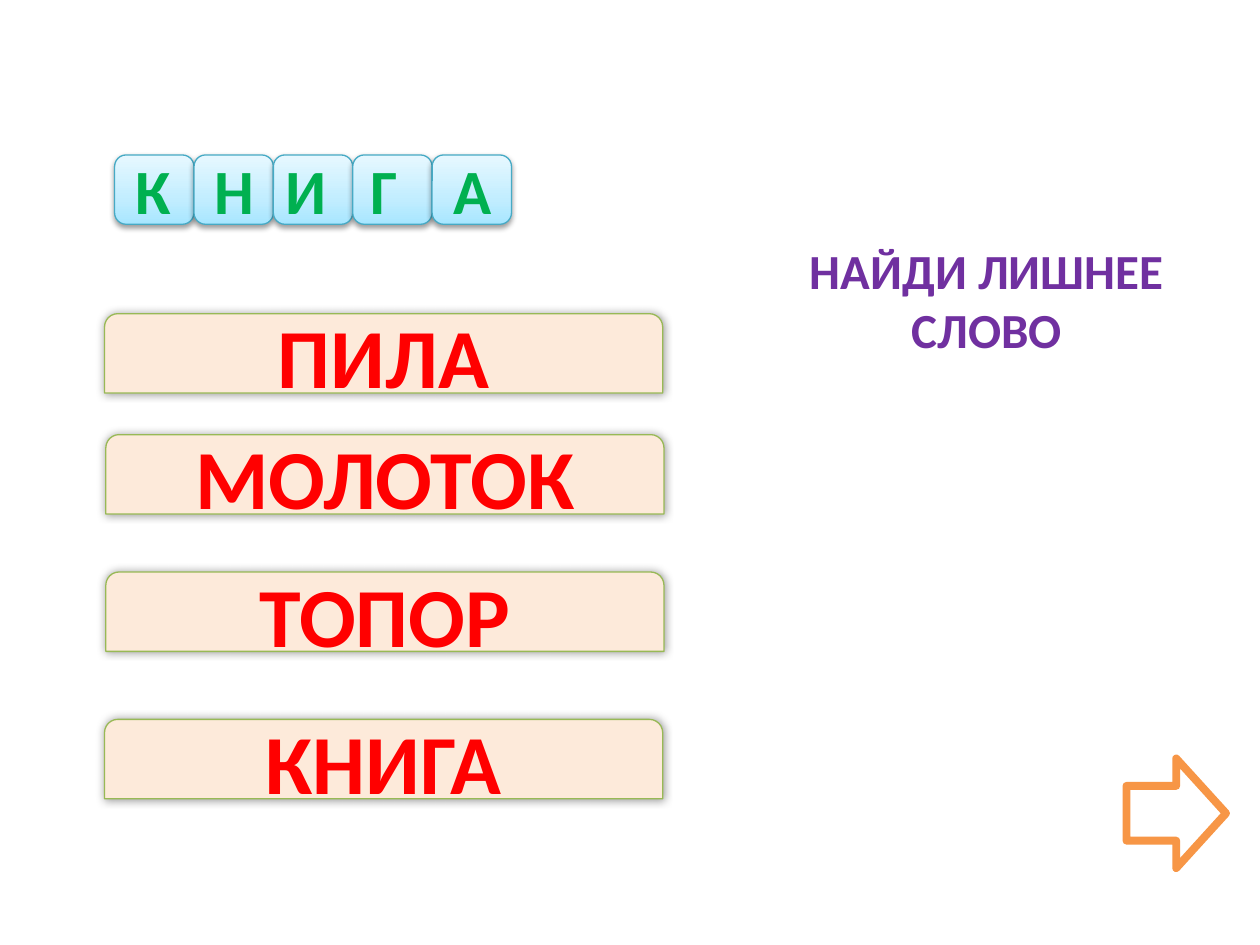
from copy import deepcopy
from dataclasses import dataclass

from lxml.etree import SubElement
from pptx import Presentation
from pptx.dml.color import RGBColor
from pptx.enum.shapes import MSO_SHAPE
from pptx.enum.text import MSO_ANCHOR, MSO_AUTO_SIZE, PP_ALIGN
from pptx.oxml.ns import qn
from pptx.util import Inches, Pt


@dataclass(frozen=True)
class Theme:
    font: str = "Calibri"
    tile_stops: tuple = ((0, "A7E6FF"), (0.35, "C1EDFF"), (1, "E7F8FF"))
    tile_line: str = "46AAC5"
    letter: str = "00B050"
    bar_fill: str = "FDEADA"
    bar_line: str = "98B955"
    word: str = "FF0000"
    task: str = "7030A0"
    arrow_fill: str = "FFFFFF"
    arrow_line: str = "F79646"
    shadow: str = "000000"
    letter_size: int = 36
    word_size: int = 48
    task_size: int = 28


def rgb(color):
    return RGBColor.from_string(color)


def write_text(tf, text, *, font, size, color, align=PP_ALIGN.LEFT,
               anchor=MSO_ANCHOR.TOP, wrap=True, auto_size=MSO_AUTO_SIZE.NONE):
    tf.word_wrap = wrap
    tf.auto_size = auto_size
    tf.vertical_anchor = anchor
    p = tf.paragraphs[0]
    p.alignment = align
    r = p.add_run()
    r.text = text
    r.font.name = font
    r.font.size = Pt(size)
    r.font.bold = True
    r.font.color.rgb = rgb(color)


class SlideBuilder:
    def __init__(self, slide, theme):
        self.slide = slide
        self.theme = theme

    def shape(self, kind, box, line, width, fill=None, shapes=None):
        shapes = self.slide.shapes if shapes is None else shapes
        sp = shapes.add_shape(kind, *map(Inches, box))
        if fill:
            sp.fill.solid()
            sp.fill.fore_color.rgb = rgb(fill)
        sp.line.color.rgb = rgb(line)
        sp.line.width = Pt(width)
        sp.shadow.inherit = False
        return sp

    def outer_shadow(self, sp, alpha, blur, dist=0, angle=0):
        """Add a shadow: alpha in percent, blur and dist in points, angle in degrees."""
        effects = sp.element.spPr.find(qn("a:effectLst"))
        shadow = SubElement(effects, qn("a:outerShdw"), blurRad=str(Pt(blur)),
                            dist=str(Pt(dist)), dir=str(angle * 60000), rotWithShape="0")
        color = SubElement(shadow, qn("a:srgbClr"), val=self.theme.shadow)
        SubElement(color, qn("a:alpha"), val=str(alpha * 1000))

    def tile(self, group, box):
        sp = self.shape(MSO_SHAPE.ROUNDED_RECTANGLE, box, self.theme.tile_line, 0.75,
                        shapes=group.shapes)
        sp.fill.gradient()
        sp.fill.gradient_angle = 90
        gs_list = sp.element.spPr.find(".//" + qn("a:gsLst"))
        gs_list.append(deepcopy(gs_list[0]))
        for stop, (position, color) in zip(sp.fill.gradient_stops, self.theme.tile_stops):
            stop.position = position
            stop.color.rgb = rgb(color)
        self.outer_shadow(sp, 38, 3.15, 1.57, 90)

    def letter(self, group, text, box):
        t = self.theme
        sp = group.shapes.add_textbox(*map(Inches, box))
        write_text(sp.text_frame, text, font=t.font, size=t.letter_size, color=t.letter,
                   wrap=False, auto_size=MSO_AUTO_SIZE.SHAPE_TO_FIT_TEXT)

    def word_bar(self, text, box):
        t = self.theme
        sp = self.shape(MSO_SHAPE.ROUND_2_SAME_RECTANGLE, box, t.bar_line, 0.75, t.bar_fill)
        self.outer_shadow(sp, 40, 5)
        write_text(sp.text_frame, text, font=t.font, size=t.word_size, color=t.word,
                   align=PP_ALIGN.CENTER, anchor=MSO_ANCHOR.MIDDLE)

    def task(self, text, box):
        t = self.theme
        sp = self.slide.shapes.title
        sp.left, sp.top, sp.width, sp.height = map(Inches, box)
        write_text(sp.text_frame, text, font=t.font, size=t.task_size, color=t.task,
                   align=PP_ALIGN.CENTER, auto_size=MSO_AUTO_SIZE.SHAPE_TO_FIT_TEXT)

    def next_arrow(self, box):
        self.shape(MSO_SHAPE.RIGHT_ARROW, box, self.theme.arrow_line, 4.5,
                   self.theme.arrow_fill)


def main():
    prs = Presentation()
    prs.slide_width, prs.slide_height = Inches(10), Inches(7.5)
    builder = SlideBuilder(prs.slides.add_slide(prs.slide_layouts[5]), Theme())

    builder.task("НАЙДИ ЛИШНЕЕ СЛОВО", (5.94, 1.86, 3.78, 1.04))

    letters = (("К", 0.98, 0.48), ("Н", 1.6, 0.52), ("И", 2.17, 0.53),
               ("Г", 2.84, 0.42), ("А", 3.5, 0.51))
    tile_width = 0.63
    tiles = builder.slide.shapes.add_group_shape()
    for i in range(len(letters)):
        builder.tile(tiles, (0.91 + i * tile_width, 1.23, tile_width, 0.55))

    words = (("ПИЛА", 0.83, 2.49), ("МОЛОТОК", 0.84, 3.45),
             ("ТОПОР", 0.84, 4.54), ("КНИГА", 0.83, 5.71))
    for word, left, top in words:
        builder.word_bar(word, (left, top, 4.43, 0.63))

    answer = builder.slide.shapes.add_group_shape()
    for text, left, width in letters:
        builder.letter(answer, text, (left, 1.15, width, 0.71))

    builder.next_arrow((8.94, 6.02, 0.79, 0.87))
    prs.save("out.pptx")


if __name__ == "__main__":
    main()
